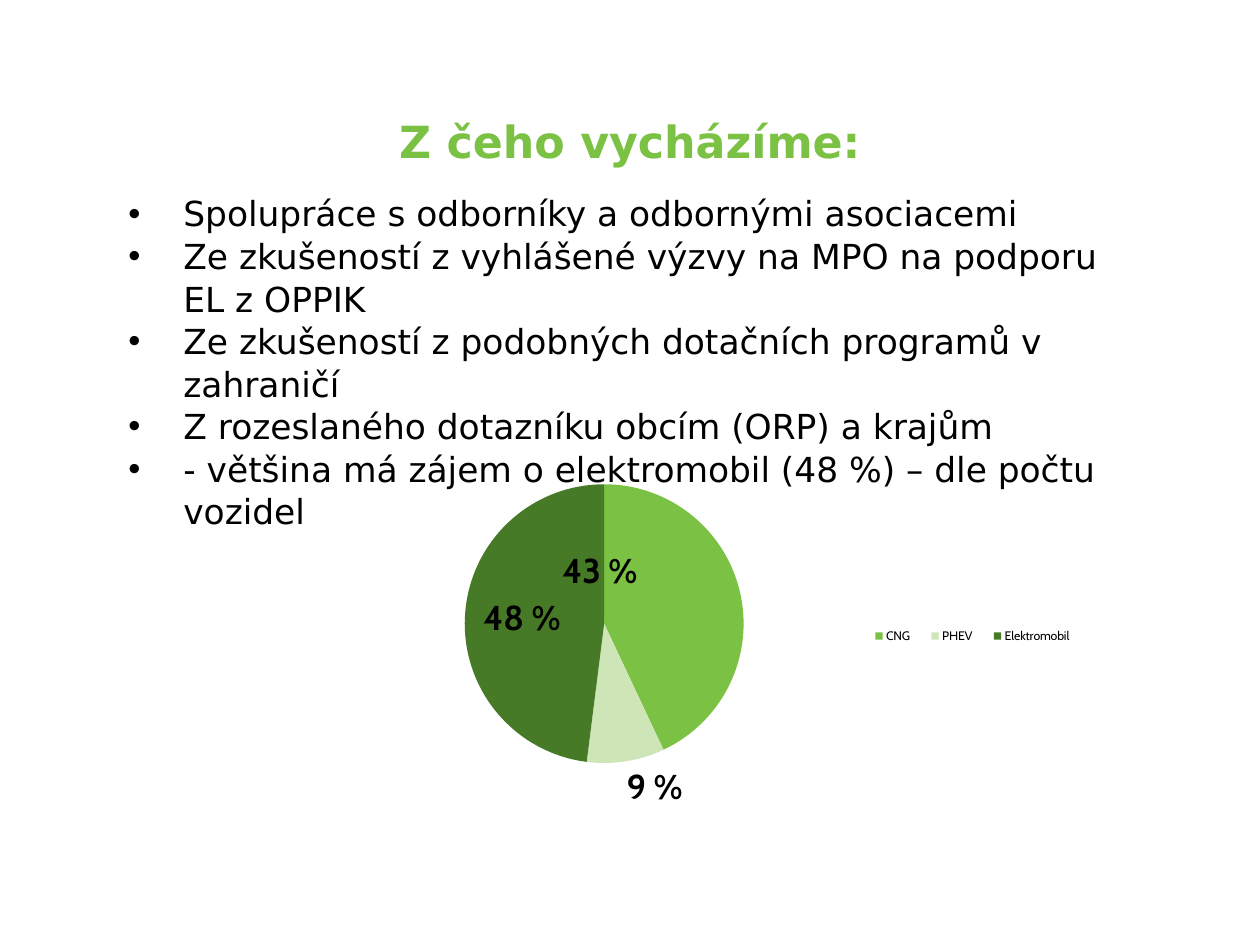
from lxml import etree
from pptx import Presentation
from pptx.chart.data import CategoryChartData
from pptx.dml.color import RGBColor
from pptx.enum.chart import XL_CHART_TYPE, XL_LABEL_POSITION, XL_LEGEND_POSITION
from pptx.enum.text import MSO_ANCHOR, PP_ALIGN
from pptx.oxml import parse_xml
from pptx.oxml.ns import nsdecls, qn
from pptx.util import Pt

PX = 9144  # 100 px to the inch
PIE = XL_CHART_TYPE.PIE
OUTSIDE = XL_LABEL_POSITION.OUTSIDE_END
RIGHT = XL_LEGEND_POSITION.RIGHT
TOP, BOTTOM = MSO_ANCHOR.TOP, MSO_ANCHOR.BOTTOM
CENTER = PP_ALIGN.CENTER

SANS, CABIN = "DejaVu Sans", "Cabin"
COLORS = {"green": "7BC143", "pale": "CEE5B8", "dark": "467A26", "black": "000000"}

POINTS = [
    "Spolupráce s odborníky a odbornými asociacemi",
    "Ze zkušeností z vyhlášené výzvy na MPO na podporu EL z OPPIK",
    "Ze zkušeností z podobných dotačních programů v zahraničí",
    "Z rozeslaného dotazníku obcím (ORP) a krajům",
    "- většina má zájem o elektromobil (48 %) – dle počtu vozidel",
]
# name, share, colour, label shift as a part of the chart
SLICES = [
    ("CNG", 43, "green", (-0.2, 0)),
    ("PHEV", 9, "pale", None),
    ("Elektromobil", 48, "dark", (0.11, 0.01)),
]


def rgb(name):
    return RGBColor.from_string(COLORS[name])


def style(font, face, size, color, bold=False):
    font.name, font.size, font.bold = face, Pt(size), bold
    font.color.rgb = rgb(color)


def frame(slide, box, anchor):
    """Add a wrapping text box with narrow margins."""
    text = slide.shapes.add_textbox(*(n * PX for n in box)).text_frame
    text.word_wrap = True
    text.vertical_anchor = anchor
    text.margin_left = text.margin_right = 6 * PX
    text.margin_top = text.margin_bottom = 6 * PX
    return text


def title(slide, box):
    para = frame(slide, box, BOTTOM).paragraphs[0]
    para.alignment = CENTER
    run = para.add_run()
    run.text = "Z čeho vycházíme:"
    style(run.font, SANS, 36, "green", True)


def bullets(slide, box):
    text = frame(slide, box, TOP)
    for i, point in enumerate(POINTS):
        para = text.add_paragraph() if i else text.paragraphs[0]
        para.line_spacing = 1.03
        props = para._p.get_or_add_pPr()
        props.set("marL", str(62 * PX))
        props.set("indent", str(-62 * PX))
        etree.SubElement(props, qn("a:buFont")).set("typeface", "Arial")
        etree.SubElement(props, qn("a:buChar")).set("char", "•")
        run = para.add_run()
        run.text = point
        style(run.font, SANS, 28, "black")


def place(prior, **parts):
    """Put a manual layout right after the given chart element."""
    for old in prior.getparent().findall(qn("c:layout")):
        old.getparent().remove(old)
    items = "".join(f'<c:{key} val="{val}"/>' for key, val in parts.items())
    prior.addnext(parse_xml(
        f'<c:layout {nsdecls("c")}><c:manualLayout>{items}'
        "</c:manualLayout></c:layout>"))


def label(point, share, shift):
    mark = point.data_label
    run = mark.text_frame.paragraphs[0].add_run()
    run.text = f"{share} %"
    style(run.font, CABIN, 28, "black", True)
    mark.position = OUTSIDE
    if shift:
        idx = mark._get_or_add_dLbl().find(qn("c:idx"))
        place(idx, x=shift[0], y=shift[1])


def pie(slide, box):
    data = CategoryChartData()
    data.categories = [item[0] for item in SLICES]
    data.add_series("Series 1", [item[1] for item in SLICES])
    chart = slide.shapes.add_chart(PIE, *(n * PX for n in box), data).chart
    chart.has_title = False
    style(chart.font, CABIN, 10, "black")

    series = chart.plots[0].series[0]
    for i, (_, share, color, shift) in enumerate(SLICES):
        point = series.points[i]
        point.format.fill.solid()
        point.format.fill.fore_color.rgb = rgb(color)
        point.format.line.fill.background()
        label(point, share, shift)
    for lines in chart._chartSpace.iter(qn("c:showLeaderLines")):
        lines.set("val", "0")

    chart.has_legend = True
    legend = chart.legend
    legend.position = RIGHT
    legend.include_in_layout = False
    style(legend.font, CABIN, 10, "black")
    place(legend._element.find(qn("c:legendPos")),
          xMode="edge", yMode="edge", x=0.73, y=0.43, w=0.25, h=0.08)

    plot = chart._chartSpace.chart.plotArea
    for old in plot.findall(qn("c:layout")):
        plot.remove(old)
    area = parse_xml(f'<c:layout {nsdecls("c")}/>')
    plot.insert(0, area)
    place(area, layoutTarget="inner", xMode="edge", yMode="edge",
          x=0.25, y=0.04, w=0.31, h=0.8)


def main():
    deck = Presentation()
    deck.slide_width, deck.slide_height = 1422 * PX, 1067 * PX
    slide = deck.slides.add_slide(deck.slide_layouts[6])
    title(slide, (139, 53, 1144, 142))
    bullets(slide, (139, 210, 1144, 701))
    pie(slide, (215, 533, 1032, 394))
    deck.save("out.pptx")


if __name__ == "__main__":
    main()
